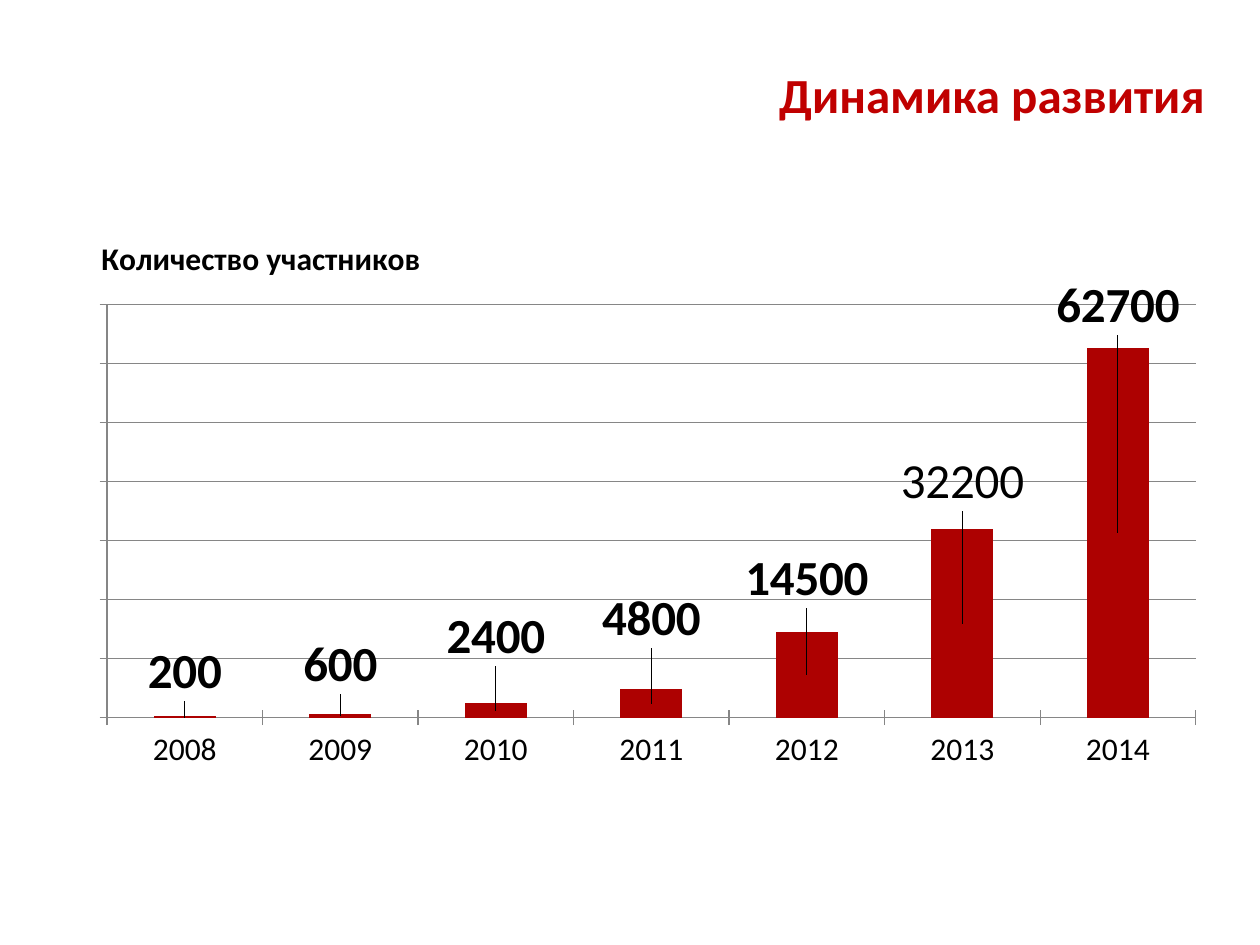
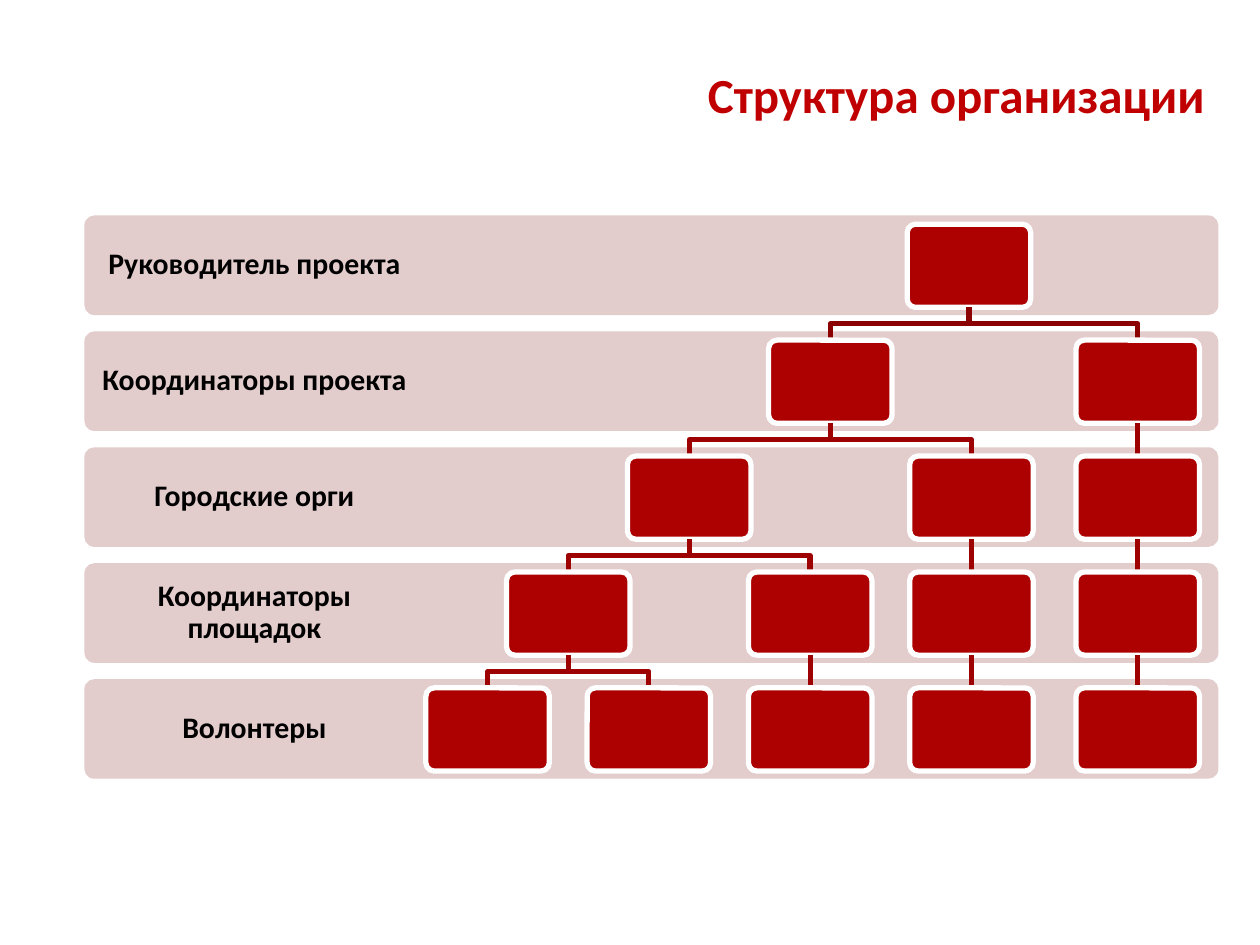
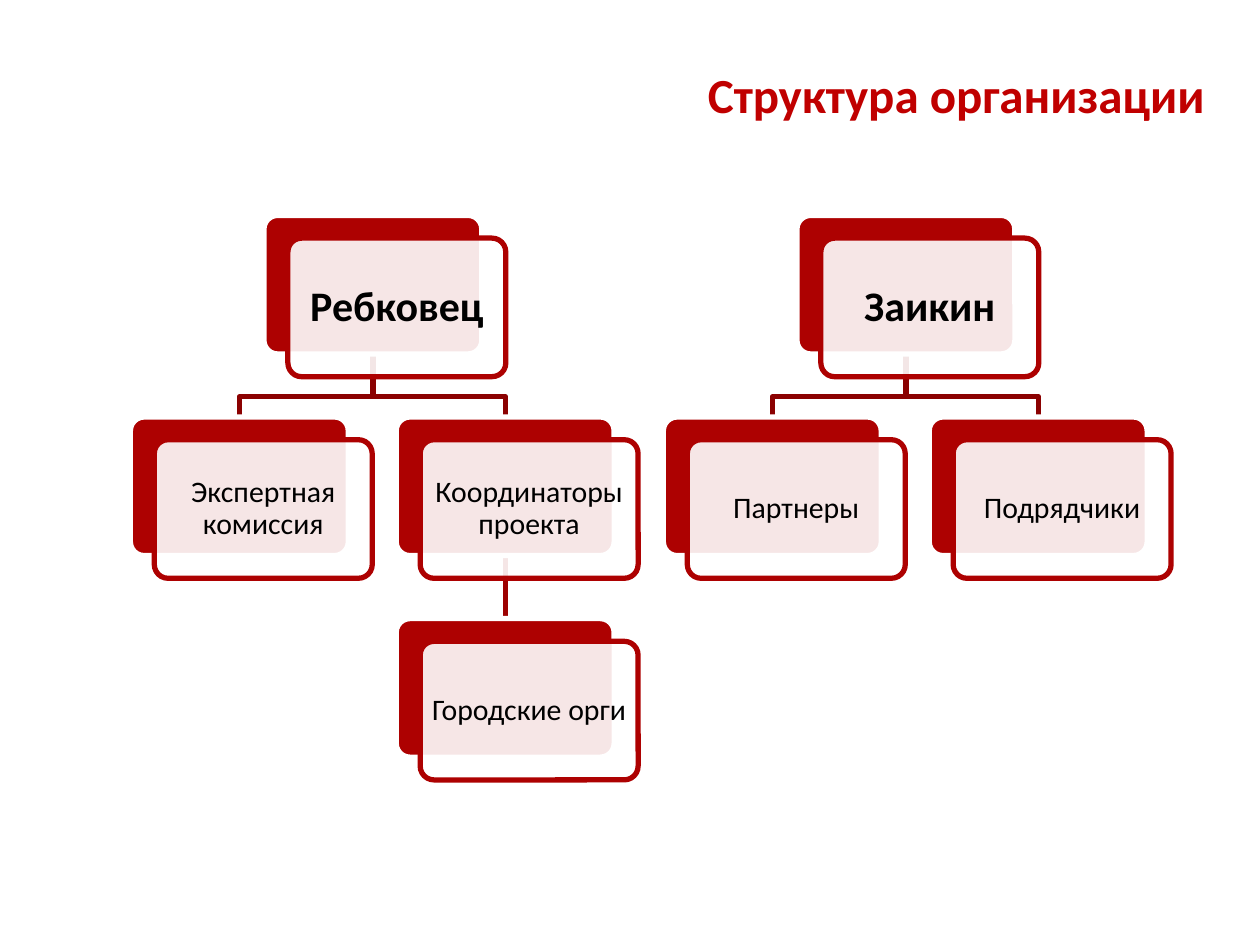
from lxml import etree
from pptx import Presentation
from pptx.chart.data import CategoryChartData
from pptx.dml.color import RGBColor
from pptx.enum.chart import XL_CHART_TYPE, XL_TICK_LABEL_POSITION, XL_TICK_MARK
from pptx.enum.shapes import MSO_CONNECTOR, MSO_SHAPE
from pptx.enum.text import MSO_ANCHOR, PP_ALIGN
from pptx.oxml.ns import qn
from pptx.util import Inches, Pt

STACKED = XL_CHART_TYPE.COLUMN_STACKED
NO_LABELS = XL_TICK_LABEL_POSITION.NONE
CROSS = XL_TICK_MARK.CROSS
STRAIGHT = MSO_CONNECTOR.STRAIGHT
ROUND = MSO_SHAPE.ROUNDED_RECTANGLE
MIDDLE = MSO_ANCHOR.MIDDLE
CENTER, RIGHT = PP_ALIGN.CENTER, PP_ALIGN.RIGHT

RED = RGBColor(0xAD, 0x01, 0x01)
TITLE_RED = RGBColor(0xC0, 0x00, 0x00)
DARK = RGBColor(0x8B, 0x01, 0x01)
DEEP = RGBColor(0x9D, 0x01, 0x01)
PINK = RGBColor(0xE3, 0xCC, 0xCC)
GREY = RGBColor(0x86, 0x86, 0x86)
BLACK = RGBColor(0x00, 0x00, 0x00)
WHITE = RGBColor(0xFF, 0xFF, 0xFF)

FONT = "Calibri"
LEFT, WIDTH = 0.67, 9

# year, value, rise of the label above the middle of its bar
GROWTH = [
    ("2008", 200, 0.08), ("2009", 600, 0.09), ("2010", 2400, 0.13),
    ("2011", 4800, 0.15), ("2012", 14500, 0.17), ("2013", 32000, 0.25),
    ("2014", 62700, 0.4),
]
OWN_LABELS = {"2013": "32200"}

ROLES = ["Руководитель проекта", "Координаторы проекта", "Городские орги",
         "Координаторы площадок", "Волонтеры"]
# per row: centre of each box, index of its parent in the row above
TREE = [
    [(7.69, 0)],
    [(6.59, 0), (9.03, 0)],
    [(5.47, 0), (7.71, 0), (9.03, 1)],
    [(4.51, 0), (6.43, 0), (7.71, 1), (9.03, 2)],
    [(3.87, 0), (5.15, 0), (6.43, 1), (7.71, 2), (9.03, 3)],
]
# per row: name, centre of the card, index of its parent in the row above
TEAMS = [
    [("Ребковец", 2.96, 0), ("Заикин", 7.19, 0)],
    [("Экспертная комиссия", 1.9, 0), ("Координаторы проекта", 4.01, 0),
     ("Партнеры", 6.13, 1), ("Подрядчики", 8.24, 1)],
    [("Городские орги", 4.01, 1)],
]


def assign(target, values):
    for name, value in values.items():
        setattr(target, name, value)


def style(font, size, bold=False, color=BLACK):
    assign(font, {"name": FONT, "size": Pt(size), "bold": bold})
    font.color.rgb = color


def area(*lengths):
    return [Inches(n) for n in lengths]


def layout(node, index, values):
    """Give a chart element a manual layout, as its child at index."""
    for old in node.findall(qn("c:layout")):
        node.remove(old)
    new = etree.Element(qn("c:layout"))
    manual = etree.SubElement(new, qn("c:manualLayout"))
    for name, value in values.items():
        etree.SubElement(manual, qn("c:" + name)).set("val", str(value))
    node.insert(index, new)


class Deck:
    def __init__(self):
        self.prs = Presentation()
        self.prs.slide_width, self.prs.slide_height = area(10, 7.5)
        self.slide = None

    def page(self, title):
        self.slide = self.prs.slides.add_slide(self.prs.slide_layouts[5])
        head = self.slide.shapes.title
        head.left, head.top, head.width, head.height = area(4.06, 0.36, 5.6, 0.85)
        self.fill_text(head, title, 28, True, TITLE_RED, align=RIGHT, space=0.8)

    def fill_text(self, shape, text, size, bold=False, color=BLACK,
                  align=CENTER, space=0.9, inset=None):
        frame = shape.text_frame
        assign(frame, {"text": text, "word_wrap": True, "vertical_anchor": MIDDLE})
        if inset is not None:
            sides = ("left", "top", "right", "bottom")
            assign(frame, {"margin_" + side: Inches(inset) for side in sides})
        para = frame.paragraphs[0]
        assign(para, {"alignment": align, "line_spacing": space})
        style(para.runs[0].font, size, bold, color)

    def label(self, text, place):
        box = self.slide.shapes.add_textbox(*area(*place))
        self.fill_text(box, text, 17, True, inset=0.13)

    def box(self, place, fill, line=None, alpha=None):
        shape = self.slide.shapes.add_shape(ROUND, *area(*place))
        shape.adjustments[0] = 0.1
        shape.shadow.inherit = False
        shape.fill.solid()
        shape.fill.fore_color.rgb = fill
        if alpha:
            tint = shape._element.spPr.find(".//" + qn("a:srgbClr"))
            etree.SubElement(tint, qn("a:alpha")).set("val", str(alpha * 1000))
        if line is None:
            shape.line.fill.background()
        else:
            self.stroke(shape.line, line)
        return shape

    def stroke(self, line, color, width=3):
        line.color.rgb = color
        line.width = Pt(width)

    def link(self, start, end, rise, color):
        """Draw a line down to a child; a bent one turns at rise above it."""
        shapes = self.slide.shapes
        if start[0] == end[0]:
            line = shapes.add_connector(STRAIGHT, *area(*start, *end))
            self.stroke(line.line, color)
            etree.SubElement(line._element.spPr, qn("a:effectLst"))
            return line
        bend = end[1] - rise
        trail = shapes.build_freeform(*area(*start))
        turns = [(start[0], bend), (end[0], bend), end]
        trail.add_line_segments([area(*point) for point in turns], close=False)
        shape = trail.convert_to_shape()
        shape.shadow.inherit = False
        shape.fill.background()
        self.stroke(shape.line, color)
        return None

    def join(self, line, parent, child):
        if line is not None:
            line.begin_connect(parent, 2)
            line.end_connect(child, 0)

    def chart(self, title, rows, place):
        data = CategoryChartData()
        data.categories = [year for year, _, _ in rows]
        data.add_series("Series 1", [value for _, value, _ in rows])
        frame = self.slide.shapes.add_chart(STACKED, *area(*place), data)
        chart = frame.chart
        chart.has_legend = False
        style(chart.font, 18)
        self.caption(chart, title)
        self.axes(chart)
        layout(chart._chartSpace.find(".//" + qn("c:plotArea")), 0,
               {"layoutTarget": "inner", "xMode": "edge", "yMode": "edge",
                "x": 0.02, "y": 0.16, "w": 0.96, "h": 0.73})
        plot = chart.plots[0]
        assign(plot, {"gap_width": 150, "overlap": 100, "vary_by_categories": False})
        self.bars(plot, rows)

    def caption(self, chart, text):
        chart.has_title = True
        title = chart.chart_title
        title.text_frame.text = text
        style(title.text_frame.paragraphs[0].runs[0].font, 18, True)
        layout(title._element, 1,
               {"xMode": "edge", "yMode": "edge", "x": 0.01, "y": 0.03})

    def axes(self, chart):
        scale = chart.value_axis
        assign(scale, {"minimum_scale": 0, "maximum_scale": 70000,
                       "major_unit": 10000, "has_major_gridlines": True,
                       "tick_label_position": NO_LABELS})
        self.stroke(scale.major_gridlines.format.line, GREY, 0.75)
        for axis in (scale, chart.category_axis):
            axis.major_tick_mark = CROSS
            self.stroke(axis.format.line, GREY, 0.75)

    def bars(self, plot, rows):
        series = plot.series[0]
        series.format.fill.solid()
        series.format.fill.fore_color.rgb = RED
        labels = series.data_labels
        labels.show_value = True
        style(labels.font, 28, True)
        for index, (year, _, _) in enumerate(rows):
            tag = series.points[index].data_label
            if year in OWN_LABELS:
                tag.text_frame.text = OWN_LABELS[year]
                style(tag.text_frame.paragraphs[0].runs[0].font, 28)
            else:
                style(tag.font, 28, True)
        nodes = series._element.findall(".//" + qn("c:dLbl"))
        for node, (_, _, rise) in zip(nodes, rows):
            layout(node, 1, {"x": 0, "y": -rise})


def shade(row):
    return DARK if row == 1 else DEEP


def growth(deck):
    deck.page("Динамика развития")
    deck.chart("Количество участников", GROWTH, (LEFT, 1.7, WIDTH, 4.49))


def levels(deck):
    wide, high, step = 0.98, 0.66, 0.92
    deck.page("Структура организации")
    for row, role in enumerate(ROLES):
        top = 1.71 + step * row
        deck.box((LEFT, top, WIDTH, 0.79), PINK)
        deck.label(role, (LEFT, top, 2.7, 0.79))
    above = []
    for row, nodes in enumerate(TREE):
        top = 1.78 + step * row
        boxes = []
        for mid, up in nodes:
            line = None
            if row:
                start = (TREE[row - 1][up][0], top - step + high)
                line = deck.link(start, (mid, top), 0.13, shade(row))
            boxes.append(deck.box((mid - wide / 2, top, wide, high), RED, WHITE))
            if row:
                deck.join(line, above[up], boxes[-1])
        above = boxes


def teams(deck):
    wide, high, step = 1.73, 1.1, 1.6
    tops = [1.71 + step * row for row in range(len(TEAMS))]
    deck.page("Структура организации")
    lines = {}
    for row, nodes in enumerate(TEAMS[1:], 1):
        for name, mid, up in nodes:
            start = (TEAMS[row - 1][up][1], tops[row - 1] + high)
            lines[name] = deck.link(start, (mid, tops[row]), 0.16, shade(row))
    above = []
    for row, nodes in enumerate(TEAMS):
        size, inset = (17, 0.03) if row else (24, 0.07)
        cards = []
        for name, mid, up in nodes:
            left, top = mid - wide / 2, tops[row]
            cards.append(deck.box((left, top, wide, high), RED, WHITE))
            front = deck.box((left + 0.19, top + 0.18, wide, high), WHITE, RED, 90)
            deck.fill_text(front, name, size, not row, inset=inset)
            if row:
                deck.join(lines[name], above[up], cards[-1])
        above = cards


def main():
    deck = Deck()
    growth(deck)
    levels(deck)
    teams(deck)
    deck.prs.save("out.pptx")


if __name__ == "__main__":
    main()
